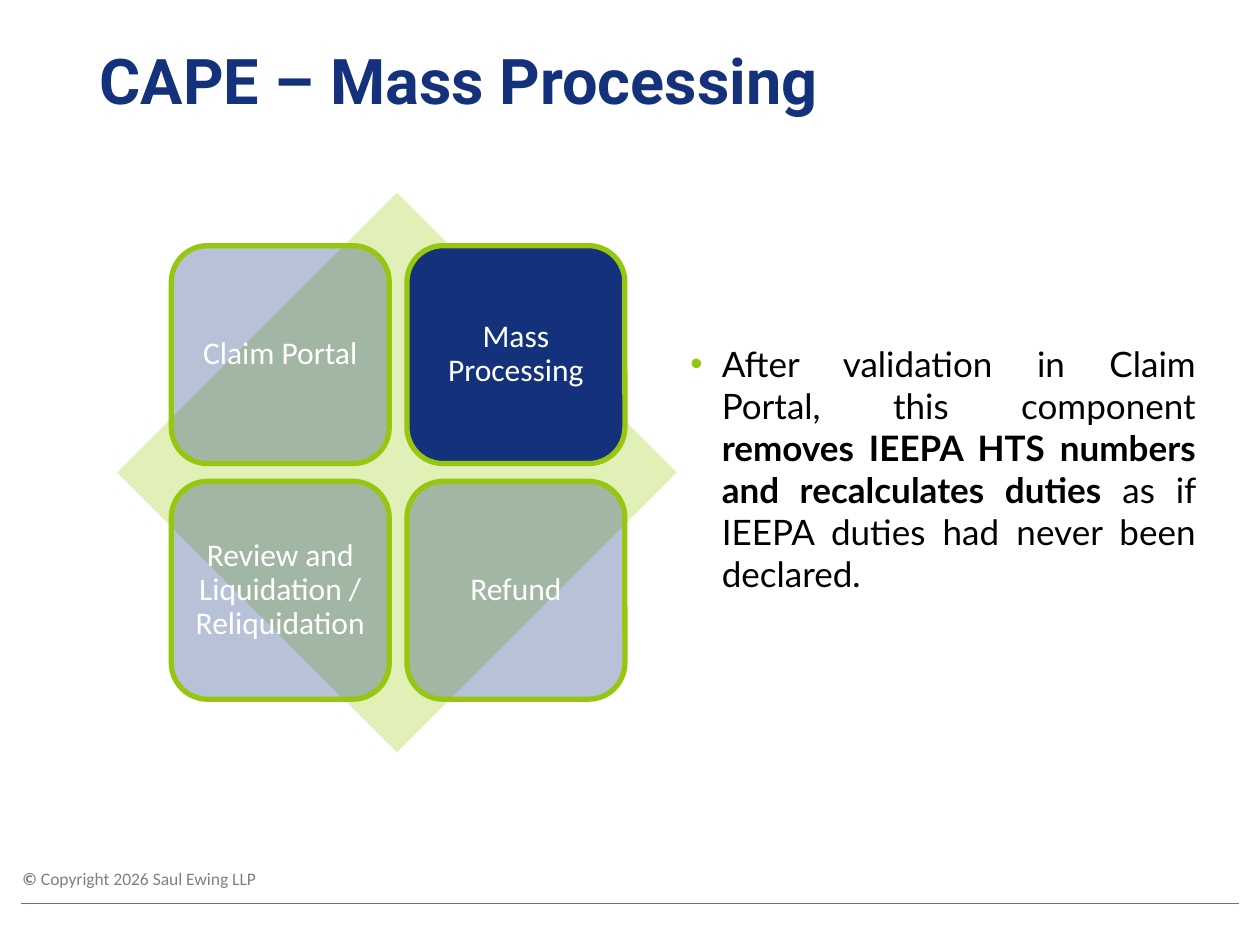
from dataclasses import dataclass

from lxml import etree
from pptx import Presentation
from pptx.dml.color import RGBColor
from pptx.enum.shapes import MSO_CONNECTOR, MSO_SHAPE
from pptx.enum.text import MSO_ANCHOR, PP_ALIGN
from pptx.oxml.ns import qn
from pptx.util import Inches, Pt

DIAMOND = MSO_SHAPE.DIAMOND
ROUNDED = MSO_SHAPE.ROUNDED_RECTANGLE
STRAIGHT = MSO_CONNECTOR.STRAIGHT
MIDDLE = MSO_ANCHOR.MIDDLE
LEFT, CENTER, JUSTIFY = PP_ALIGN.LEFT, PP_ALIGN.CENTER, PP_ALIGN.JUSTIFY
TITLE_ONLY = 5


@dataclass(frozen=True)
class Theme:
    navy: str = "13327B"
    green: str = "96C610"
    pale_green: str = "E1F0B7"
    white: str = "FFFFFF"
    black: str = "000000"
    gray: str = "808080"
    rule: str = "767171"
    title_font: str = "Roboto"
    body_font: str = "Lato"
    label_font: str = "Calibri"
    title_size: int = 36
    body_size: int = 20
    label_size: int = 18
    footer_size: int = 10


THEME = Theme()
STEPS = ["Claim Portal", "Mass Processing",
         "Review and Liquidation / Reliquidation", "Refund"]
CURRENT_STEP = "Mass Processing"
TILE_LEFT, TILE_TOP, TILE_SIZE, TILE_PITCH = 1.36, 1.95, 1.73, 1.87
FADED_OPACITY = 30


def set_font(font, name, size, color):
    font.name = name
    font.size = Pt(size)
    font.color.rgb = RGBColor.from_string(color)


def fill_solid(shape, color, opacity=100):
    shape.fill.solid()
    shape.fill.fore_color.rgb = RGBColor.from_string(color)
    if opacity < 100:
        tint = shape.fill._xPr.find(qn("a:solidFill"))[0]
        etree.SubElement(tint, qn("a:alpha"), val=str(opacity * 1000))


def add_spans(para, spans):
    for text, bold in spans:
        span = para.add_run()
        span.text = text
        span.font.bold = bold


def set_bullet(para, color, indent):
    properties = para._p.get_or_add_pPr()
    properties.set("marL", str(indent))
    properties.set("indent", str(-indent))
    bullet_color = etree.SubElement(properties, qn("a:buClr"))
    etree.SubElement(bullet_color, qn("a:srgbClr"), val=color)
    etree.SubElement(properties, qn("a:buFont"), typeface="Arial")
    etree.SubElement(properties, qn("a:buChar"), char="•")


def set_title(page, text):
    title = page.shapes.title
    title.left, title.top = Inches(0.69), Inches(0.25)
    title.width, title.height = Inches(8.62), Inches(0.84)
    title.text_frame.text = text
    title.text_frame.vertical_anchor = MIDDLE
    para = title.text_frame.paragraphs[0]
    para.alignment = LEFT
    para.line_spacing = 0.9
    set_font(para.font, THEME.title_font, THEME.title_size, THEME.navy)
    para.font.bold = True


def add_text(page, left, top, width, height, wrap):
    box = page.shapes.add_textbox(Inches(left), Inches(top), Inches(width), Inches(height))
    box.text_frame.word_wrap = wrap
    return box.text_frame.paragraphs[0]


def add_footer(page):
    para = add_text(page, 0.08, 6.84, 2.08, 0.27, False)
    add_spans(para, [("© ", True), ("Copyright 2026 Saul Ewing LLP", False)])
    set_font(para.font, THEME.label_font, THEME.footer_size, THEME.gray)
    rule = page.shapes.add_connector(
        STRAIGHT, Inches(0.17), Inches(7.17), Inches(9.83), Inches(7.17))
    rule.line.color.rgb = RGBColor.from_string(THEME.rule)
    rule.line.width = Pt(0.5)
    etree.SubElement(rule._element.spPr, qn("a:effectLst"))


def add_explanation(page):
    para = add_text(page, 5.38, 2.67, 4.21, 2.17, True)
    set_bullet(para, THEME.green, Inches(0.25))
    add_spans(para, [
        ("After validation in Claim Portal, this component ", False),
        ("removes IEEPA HTS numbers and recalculates duties", True),
        (" as if IEEPA duties had never been declared.", False)])
    para.alignment = JUSTIFY
    set_font(para.font, THEME.body_font, THEME.body_size, THEME.black)


def add_diamond(page):
    diamond = page.shapes.add_shape(
        DIAMOND, Inches(0.93), Inches(1.53), Inches(4.44), Inches(4.44))
    diamond.shadow.inherit = False
    fill_solid(diamond, THEME.pale_green)
    diamond.line.fill.background()


def add_tile(page, text, left, top, opacity):
    tile = page.shapes.add_shape(
        ROUNDED, Inches(left), Inches(top), Inches(TILE_SIZE), Inches(TILE_SIZE))
    tile.shadow.inherit = False
    fill_solid(tile, THEME.navy, opacity)
    tile.line.color.rgb = RGBColor.from_string(THEME.green)
    tile.line.width = Pt(3)
    frame = tile.text_frame
    frame.word_wrap = True
    frame.vertical_anchor = MIDDLE
    frame.margin_left = frame.margin_right = Inches(0.08)
    frame.margin_top = frame.margin_bottom = Inches(0.08)
    frame.text = text
    para = frame.paragraphs[0]
    para.alignment = CENTER
    para.line_spacing = 0.9
    set_font(para.font, THEME.label_font, THEME.label_size, THEME.white)


def add_step_matrix(page):
    add_diamond(page)
    for index, step in enumerate(STEPS):
        row, column = divmod(index, 2)
        opacity = 100 if step == CURRENT_STEP else FADED_OPACITY
        add_tile(page, step, TILE_LEFT + column * TILE_PITCH,
                 TILE_TOP + row * TILE_PITCH, opacity)


def main():
    deck = Presentation()
    deck.slide_width, deck.slide_height = Inches(10), Inches(7.5)
    page = deck.slides.add_slide(deck.slide_layouts[TITLE_ONLY])
    add_footer(page)
    add_explanation(page)
    set_title(page, "CAPE – Mass Processing")
    add_step_matrix(page)
    deck.save("out.pptx")


if __name__ == "__main__":
    main()
